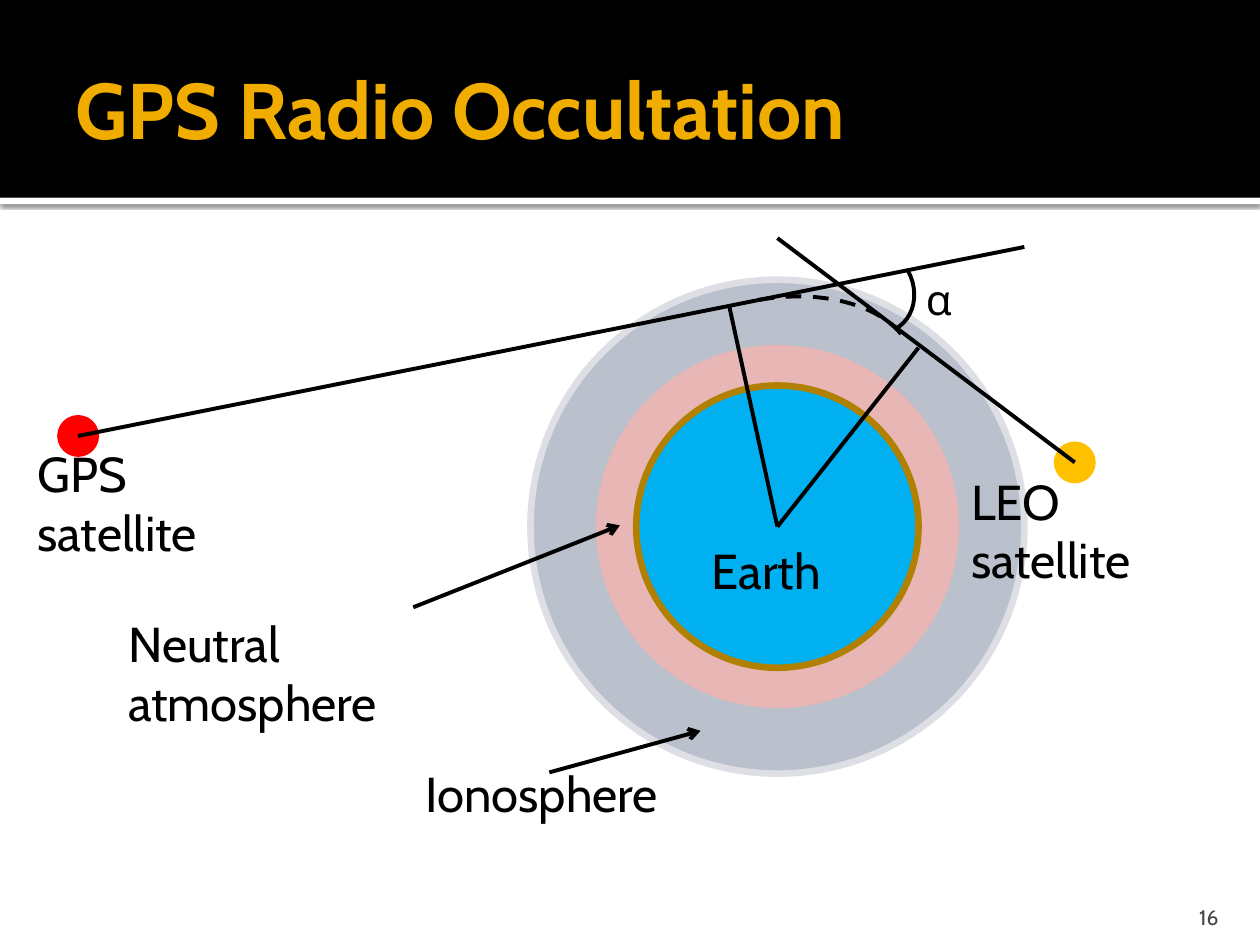
"""Builds the GPS Radio Occultation slide."""
from lxml.etree import SubElement
from pptx import Presentation
from pptx.dml.color import RGBColor
from pptx.enum.dml import MSO_LINE_DASH_STYLE as DASH
from pptx.enum.shapes import MSO_CONNECTOR, MSO_SHAPE as SHAPE
from pptx.enum.text import MSO_ANCHOR as ANCHOR, MSO_AUTO_SIZE as AUTO, PP_ALIGN as ALIGN
from pptx.oxml.ns import qn
from pptx.util import Inches, Pt

THEME = {
    "font": "Cabin", "title": "F0AD00", "ink": "000000", "paper": "FFFFFF", "number": "454545",
    "title_pt": 45, "label_pt": 28, "angle_pt": 24, "number_pt": 12, "ring_pt": 3.78, "line_pt": 2.25,
}
TITLE = "GPS Radio Occultation"
EARTH = (6.17, 4.18)
GPS = (0.62, 3.46)
LEO = (8.53, 3.67)
CIRCLES = [
    (EARTH, 3.92, "BAC0CC", "DDDFE5"),
    (EARTH, 2.83, "E8B6B5", "E8B6B5"),
    (EARTH, 2.24, "00B0F0", "B28000"),
    (GPS, 0.28, "FF0000", "FF0000"),
    (LEO, 0.28, "FFC000", "FFC000"),
]
RAYS = [(GPS, (8.13, 1.96)), (LEO, (6.17, 1.89)), (EARTH, (5.79, 2.44)), (EARTH, (7.29, 2.76))]
POINTERS = [((3.28, 4.82), (4.92, 4.17)), ((4.36, 6.13), (5.56, 5.8))]
ARCS = [
    ((5.01, 2.37, 2.26, 1.38), -10.1, (270, 348.58), DASH.DASH),
    ((6.58, 1.99, 0.71, 0.62), 61.2, (270, 0), None),
]
LABELS = [
    ("GPS satellite", (0.2, 3.47, 2.17, 0.57), "label_pt"),
    ("Earth", (5.55, 4.24, 1.73, 0.57), "label_pt"),
    ("Ionosphere", (3.28, 6.01, 3.45, 0.57), "label_pt"),
    ("Neutral atmosphere", (0.92, 4.82, 3.45, 0.57), "label_pt"),
    ("α", (7.25, 2.12, 1.24, 0.5), "angle_pt"),
    ("LEO satellite", (7.61, 3.69, 2.17, 0.57), "label_pt"),
]


def color(name):
    return RGBColor.from_string(THEME.get(name, name))


def inches(box):
    return [Inches(v) for v in box]


def add_filled(s, kind, box, fill, line=None):
    sp = s.shapes.add_shape(kind, *inches(box))
    sp.shadow.inherit = False
    sp.fill.solid()
    sp.fill.fore_color.rgb = color(fill)
    if line:
        sp.line.color.rgb = color(line)
        sp.line.width = Pt(THEME["ring_pt"])
    else:
        sp.line.fill.background()
    return sp


def add_bar_shadow(sp):
    effects = sp.element.spPr.find(qn("a:effectLst"))
    shadow = SubElement(effects, qn("a:outerShdw"), blurRad=str(Pt(2.5)), dist=str(Pt(0.8)),
                        dir="5400000", rotWithShape="0")
    clr = SubElement(shadow, qn("a:srgbClr"), val=THEME["ink"])
    SubElement(clr, qn("a:alpha"), val="60000")


def ink_line(sp):
    sp.line.color.rgb = color("ink")
    sp.line.width = Pt(THEME["line_pt"])


def add_line(s, start, end, arrow=False):
    c = s.shapes.add_connector(MSO_CONNECTOR.STRAIGHT, *inches(start + end))
    ink_line(c)
    SubElement(c.element.spPr, qn("a:effectLst"))
    if arrow:
        SubElement(c.line._get_or_add_ln(), qn("a:tailEnd"), type="arrow")


def add_arc(s, box, rotation, angles, dash):
    sp = s.shapes.add_shape(SHAPE.ARC, *inches(box))
    sp.shadow.inherit = False
    sp.fill.background()
    ink_line(sp)
    sp.rotation = rotation
    for i, angle in enumerate(angles):
        sp.adjustments[i] = angle * 0.6
    if dash:
        sp.line.dash_style = dash


def set_text(sp, text, size, ink="ink", bold=False, align=ALIGN.LEFT):
    tf = sp.text_frame
    tf.word_wrap = True
    tf.text = text
    p = tf.paragraphs[0]
    p.alignment = align
    font = p.runs[0].font
    font.name, font.size, font.bold = THEME["font"], Pt(THEME[size]), bold
    font.color.rgb = color(ink)
    return tf


def add_title(s):
    title = s.shapes.title
    title.element.getparent().append(title.element)
    title.left, title.top, title.width, title.height = inches((0.5, 0.17, 9, 1.37))
    tf = set_text(title, TITLE, "title_pt", "title", bold=True)
    tf.auto_size = AUTO.NONE
    tf.vertical_anchor = ANCHOR.MIDDLE
    tf.margin_right = Inches(0.05)


def add_number(s):
    box = s.shapes.add_textbox(*inches((8.97, 7.08, 0.8, 0.3)))
    tf = set_text(box, "16", "number_pt", "number", align=ALIGN.RIGHT)
    tf.vertical_anchor = ANCHOR.BOTTOM
    tf.margin_bottom = 0


def main():
    prs = Presentation()
    prs.slide_width, prs.slide_height = Inches(10), Inches(7.5)
    s = prs.slides.add_slide(prs.slide_layouts[5])
    add_bar_shadow(add_filled(s, SHAPE.RECTANGLE, (0, 1.57, 10, 0.05), "paper"))
    add_filled(s, SHAPE.RECTANGLE, (0, 0, 10, 1.57), "ink")
    add_title(s)
    for (x, y), size, fill, line in CIRCLES:
        add_filled(s, SHAPE.OVAL, (x - size / 2, y - size / 2, size, size), fill, line)
    for start, end in RAYS:
        add_line(s, start, end)
    for start, end in POINTERS:
        add_line(s, start, end, arrow=True)
    for arc in ARCS:
        add_arc(s, *arc)
    for text, box, size in LABELS:
        tf = set_text(s.shapes.add_textbox(*inches(box)), text, size)
        tf.auto_size = AUTO.SHAPE_TO_FIT_TEXT
    add_number(s)
    prs.save("out.pptx")


if __name__ == "__main__":
    main()
